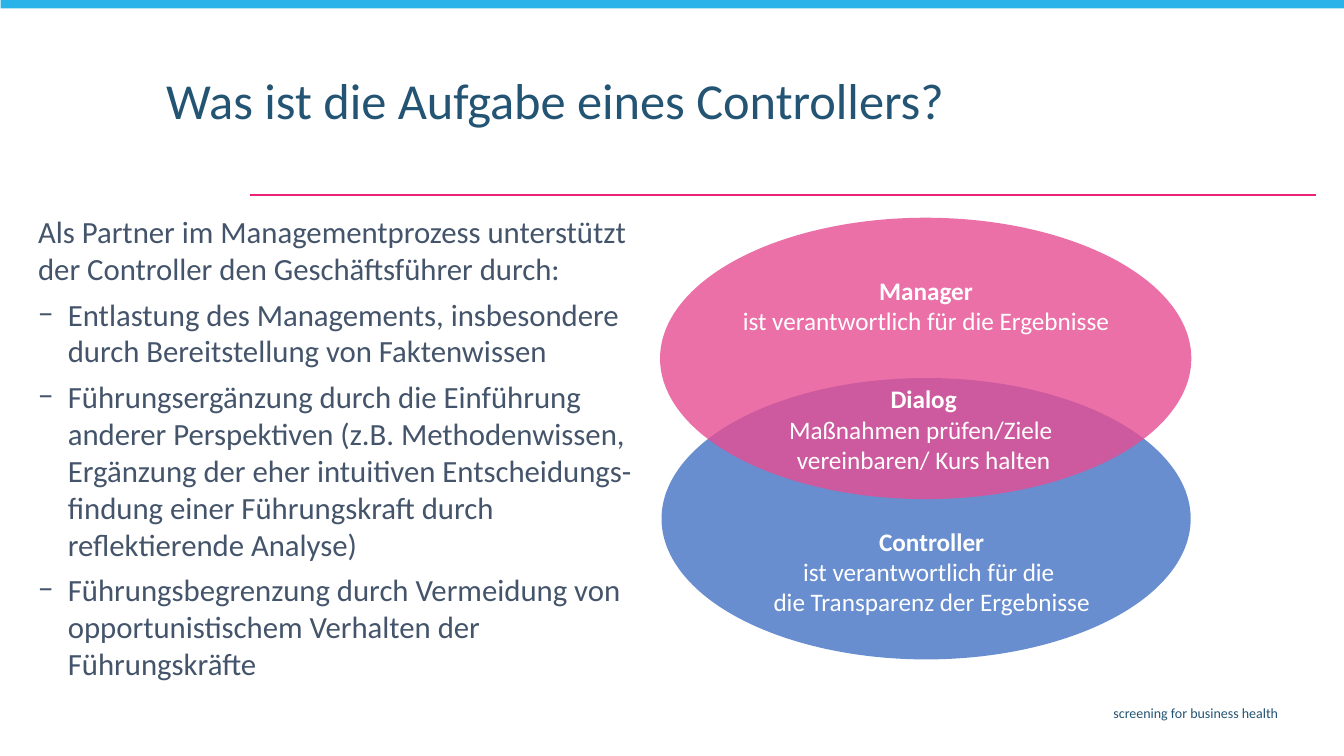
from lxml import etree
from pptx import Presentation
from pptx import util as u
from pptx.dml.color import RGBColor
from pptx.enum import shapes, text
from pptx.oxml.ns import qn


def paint(item, tone):
    """Give a fill or a line a solid colour."""
    item.solid()
    item.fore_color.rgb = RGBColor.from_string(tone)


class Deck:
    """Hold the style and the current slide."""

    face = "Calibri"
    navy, slate, white = "245473", "44546A", "FFFFFF"
    pink, rose, blue, sky = "EC2179", "E64D92", "4472C4", "29B3E8"

    def __init__(self, wide, high):
        """Open a deck with one slide."""
        self.show = Presentation()
        self.show.slide_width, self.show.slide_height = u.Pt(wide), u.Pt(high)
        self.slide = self.show.slides.add_slide(self.show.slide_layouts[1])

    def place(self, item, box):
        """Move an item to left, top, width and height."""
        for name, size in zip(("left", "top", "width", "height"), box):
            setattr(item, name, u.Pt(size))

    def fill(self, frame, lines, tone, size, **form):
        """Fill a frame with lines, each a text with its own font values."""
        frame.word_wrap = True
        frame.auto_size = text.MSO_AUTO_SIZE.NONE
        for at, (words, font) in enumerate(lines):
            para = frame.paragraphs[0] if at == 0 else frame.add_paragraph()
            para.text = words
            for name, value in form.items():
                setattr(para, name, value)
            for run in para.runs:
                look = {"name": self.face, "size": u.Pt(size), "bold": False, **font}
                for name, value in look.items():
                    setattr(run.font, name, value)
                paint(run.font.fill, tone)

    def title(self, words, box):
        """Set the title."""
        item = self.slide.shapes.title
        self.place(item, box)
        item.text_frame.vertical_anchor = text.MSO_ANCHOR.TOP
        self.fill(item.text_frame, [(words, {})], self.navy, 36,
                  alignment=text.PP_ALIGN.LEFT, line_spacing=0.9)

    def body(self, lead, points, box):
        """Set the lead line and the dashed list."""
        item = self.slide.placeholders[1]
        self.place(item, box)
        self.fill(item.text_frame, [(line, {}) for line in (lead, *points)],
                  self.slate, 22, space_before=u.Pt(6))
        for at, para in enumerate(item.text_frame.paragraphs):
            props = para._p.get_or_add_pPr()
            dent = u.Pt(21.25) if at else 0
            props.set("marL", str(dent))
            props.set("indent", str(-dent))
            if at:
                etree.SubElement(props, qn("a:buFont"), typeface=self.face)
                etree.SubElement(props, qn("a:buChar"), char="−")
            else:
                para.space_before = u.Pt(0)
                etree.SubElement(props, qn("a:buNone"))

    def shape(self, kind, box, tone, clear=100):
        """Draw a plain shape, with its opacity in percent."""
        item = self.slide.shapes.add_shape(kind, *map(u.Pt, box))
        item.shadow.inherit = False
        paint(item.fill, tone)
        item.line.fill.background()
        if clear < 100:
            node = item._element.spPr.find(".//" + qn("a:srgbClr"))
            etree.SubElement(node, qn("a:alpha"), val=str(clear * 1000))

    def rule(self, left, right, top, tone):
        """Draw a level line."""
        item = self.slide.shapes.add_connector(
            shapes.MSO_CONNECTOR.STRAIGHT, *map(u.Pt, (left, top, right, top)))
        item.line.width = u.Pt(1.5)
        paint(item.line.fill, tone)
        etree.SubElement(item._element.spPr, qn("a:effectLst"))

    def label(self, lines, box, tone, size, align, anchor):
        """Add a text box."""
        frame = self.slide.shapes.add_textbox(*map(u.Pt, box)).text_frame
        frame.vertical_anchor = anchor
        self.fill(frame, lines, tone, size, alignment=align)

    def role(self, head, lines, box):
        """Add a white text with a bold head."""
        rows = [(head, {"bold": True})] + [(line, {}) for line in lines]
        self.label(rows, box, self.white, 18,
                   text.PP_ALIGN.CENTER, text.MSO_ANCHOR.BOTTOM)


def main():
    """Build the slide."""
    deck = Deck(960, 540)
    kind = shapes.MSO_SHAPE
    deck.rule(178.5, 940, 139, deck.pink)
    deck.shape(kind.RECTANGLE, (0.5, -1.5, 960, 7.5), deck.sky)
    deck.label([("screening for business health", {})], (263, 499.5, 657, 21),
               deck.navy, 10, text.PP_ALIGN.RIGHT, text.MSO_ANCHOR.TOP)
    deck.title("Was ist die Aufgabe eines Controllers?", (111.5, 51, 697, 55))
    deck.body(
        "Als Partner im Managementprozess unterstützt der Controller "
        "den Geschäftsführer durch:",
        ("Entlastung des Managements, insbesondere durch Bereitstellung "
         "von Faktenwissen",
         "Führungsergänzung durch die Einführung anderer Perspektiven "
         "(z.B. Methodenwissen, Ergänzung der eher intuitiven "
         "Entscheidungs-findung einer Führungskraft durch "
         "reflektierende Analyse)",
         "Führungsbegrenzung durch Vermeidung von opportunistischem "
         "Verhalten der Führungskräfte"),
        (20, 148.5, 443, 375))
    for box, tone in (((472.5, 270, 378, 201), deck.blue),
                      ((471.5, 155.5, 379.5, 201), deck.rose)):
        deck.shape(kind.OVAL, box, tone, 80)
    for head, lines, box in (
            ("Manager", ["ist verantwortlich für die Ergebnisse"],
             (495.5, 192.5, 332, 51)),
            ("Controller",
             ["ist verantwortlich für die \vdie Transparenz der Ergebnisse"],
             (499, 371, 333, 73)),
            ("Dialog", ["Maßnahmen prüfen/Ziele ", "vereinbaren/ Kurs halten"],
             (445.5, 269.5, 428.5, 73))):
        deck.role(head, lines, box)
    deck.show.save("out.pptx")


if __name__ == "__main__":
    main()
